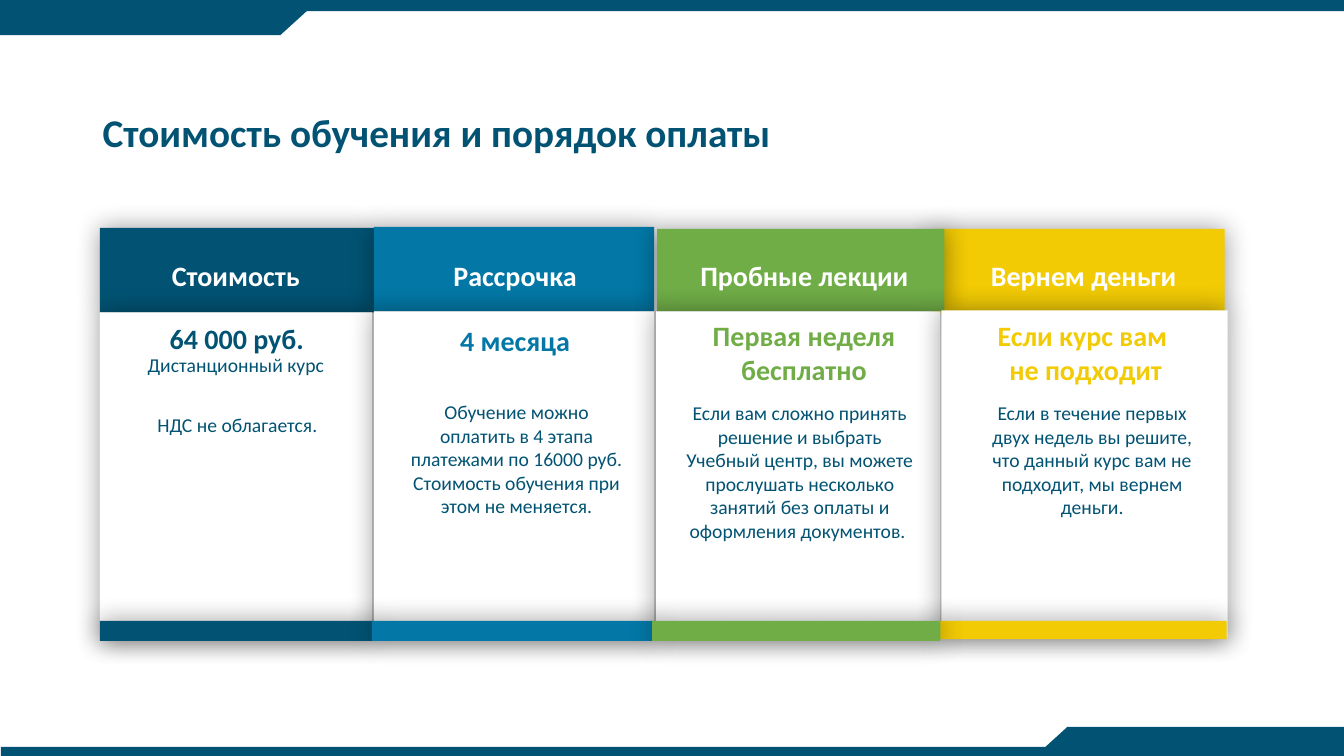
import pptx
import pptx.util
import pptx.dml.color
import pptx.enum.shapes
import pptx.enum.text
import lxml.etree

RGB = pptx.dml.color.RGBColor
NAVY = RGB(0x02, 0x53, 0x73)
BLUE = RGB(0x03, 0x78, 0xA6)
GREEN = RGB(0x70, 0xAD, 0x47)
GOLD = RGB(0xF2, 0xCB, 0x05)
WHITE = RGB(0xFF, 0xFF, 0xFF)

KIND = pptx.enum.shapes.MSO_SHAPE
ALIGN = pptx.enum.text.PP_ALIGN
FIT = pptx.enum.text.MSO_AUTO_SIZE
ANCHOR = pptx.enum.text.MSO_ANCHOR

COLS, ROWS = 133.33, 75
WIDE, TALL = pptx.util.Inches(13.33), pptx.util.Inches(7.5)
DRAW = "http://schemas.openxmlformats.org/drawingml/2006/main"
GLOW = (
    f'<a:effectLst xmlns:a="{DRAW}">'
    '<a:outerShdw blurRad="241300" dist="0" dir="0" algn="ctr" rotWithShape="0">'
    '<a:srgbClr val="000000"><a:alpha val="40000"/></a:srgbClr>'
    '</a:outerShdw></a:effectLst>'
)


class Page:
    font = "Calibri"

    def __init__(self, deck):
        self.slide = deck.slides.add_slide(deck.slide_layouts[6])

    def place(self, box):
        x, y, w, h = box
        return (round(x * WIDE / COLS), round(y * TALL / ROWS),
                round(w * WIDE / COLS), round(h * TALL / ROWS))

    def block(self, box, fill, kind=KIND.RECTANGLE, glow=False, turn=0):
        shape = self.slide.shapes.add_shape(kind, *self.place(box))
        shape.fill.solid()
        shape.fill.fore_color.rgb = fill
        shape.line.fill.background()
        shape.rotation = turn
        shape.shadow.inherit = False
        if glow:
            props = shape.element.spPr
            props.remove(props.find(f"{{{DRAW}}}effectLst"))
            props.append(lxml.etree.fromstring(GLOW))

    def text(self, box, words, color, size, bold=False, align=ALIGN.CENTER):
        frame = self.slide.shapes.add_textbox(*self.place(box)).text_frame
        frame.word_wrap = True
        frame.auto_size = FIT.SHAPE_TO_FIT_TEXT
        para = frame.paragraphs[0]
        para.text = words
        para.alignment = align
        para.font.name = self.font
        para.font.size = pptx.util.Pt(size)
        para.font.bold = bold
        para.font.color.rgb = color
        return frame

    def title(self, box, words):
        frame = self.text(box, words, NAVY, 28, True, ALIGN.LEFT)
        frame.auto_size = FIT.NONE
        frame.vertical_anchor = ANCHOR.MIDDLE
        frame.margin_top = pptx.util.Inches(0.48)
        frame.paragraphs[0].line_spacing = 0.9

    def trim(self):
        self.block((0, 0, COLS, 1.1), NAVY)
        self.block((0.1, 74.1, COLS - 0.1, 0.9), NAVY)
        self.block((0, 0.5, 27.8, 3), NAVY)
        self.block((24.5, 0.5, 6.6, 3), NAVY, KIND.FLOWCHART_MERGE)
        self.block((105.9, 72.1, COLS - 105.9, 2.9), NAVY)
        self.block((102.6, 72.1, 6.6, 3), NAVY, KIND.FLOWCHART_MERGE, turn=180)


CARDS = [
    dict(hue=NAVY, head=(9.9, 22.6, 27.2, 8.4), body=(9.9, 31, 27, 32.5),
         foot=(9.9, 61.6, 27.2, 2),
         name=((16, 25.2, 14.8, 4.4), "Стоимость"),
         lead=((12.9, 31.4, 21.2, 4.4), "64 000 руб."),
         notes=[((12.8, 34.5, 21.2, 3.4), "Дистанционный курс"),
                ((11.5, 40.5, 24.1, 3.4), "НДС не облагается.")]),
    dict(hue=BLUE, head=(37.1, 22.5, 27.8, 8.4), body=(37.1, 30.9, 27.8, 32.5),
         foot=(36.9, 61.6, 28, 2),
         name=((43.9, 25.2, 14.4, 4.4), "Рассрочка"),
         lead=((40.5, 31.6, 21.2, 4.4), "4 месяца"),
         notes=[((39.2, 39.2, 24.1, 12.8),
                 "Обучение можно оплатить в 4 этапа платежами по 16000 руб. "
                 "Стоимость обучения при этом не меняется.")]),
    dict(hue=GREEN, head=(65.2, 22.7, 28.5, 8.2), body=(65.1, 30.9, 28.2, 32.5),
         foot=(64.7, 61.6, 28.6, 2),
         name=((67.2, 25.2, 25.2, 4.4), "Пробные лекции"),
         lead=((68.4, 31.1, 22.7, 7.7), "Первая неделя бесплатно"),
         notes=[((67.1, 39.3, 24.5, 15.1),
                 "Если вам сложно принять решение и выбрать Учебный центр, "
                 "вы можете прослушать несколько занятий без оплаты и "
                 "оформления документов. ")]),
    dict(hue=GOLD, head=(92.7, 22.7, 28.8, 8.4), body=(93.4, 30.8, 28.4, 32.5),
         foot=(93.2, 61.6, 28.5, 1.8),
         name=((96.1, 25.2, 22.8, 4.4), "Вернем деньги"),
         lead=((95.9, 31.1, 23.6, 7.7), "Если курс вам \nне подходит"),
         notes=[((95.9, 39.3, 24.9, 12.8),
                 "Если в течение первых двух недель вы решите, что данный "
                 "курс вам не подходит, мы вернем деньги.")]),
]


def main():
    deck = pptx.Presentation()
    deck.slide_width, deck.slide_height = WIDE, TALL
    page = Page(deck)
    page.trim()
    page.title((9.2, 4, 120, 14.5), "Стоимость обучения и порядок оплаты")

    stack = [CARDS[i] for i in (0, 1, 3, 2)]
    for card in stack:
        page.block(card["head"], card["hue"], glow=True)
    for card in CARDS:
        page.block(card["body"], WHITE, glow=True)
    for card in stack:
        page.block(card["foot"], card["hue"], glow=True)

    for card in CARDS:
        page.text(*card["name"], WHITE, 20, True)
        page.text(*card["lead"], card["hue"], 20, True)
        for note in card["notes"]:
            page.text(*note, NAVY, 14)
    deck.save("out.pptx")


if __name__ == "__main__":
    main()
